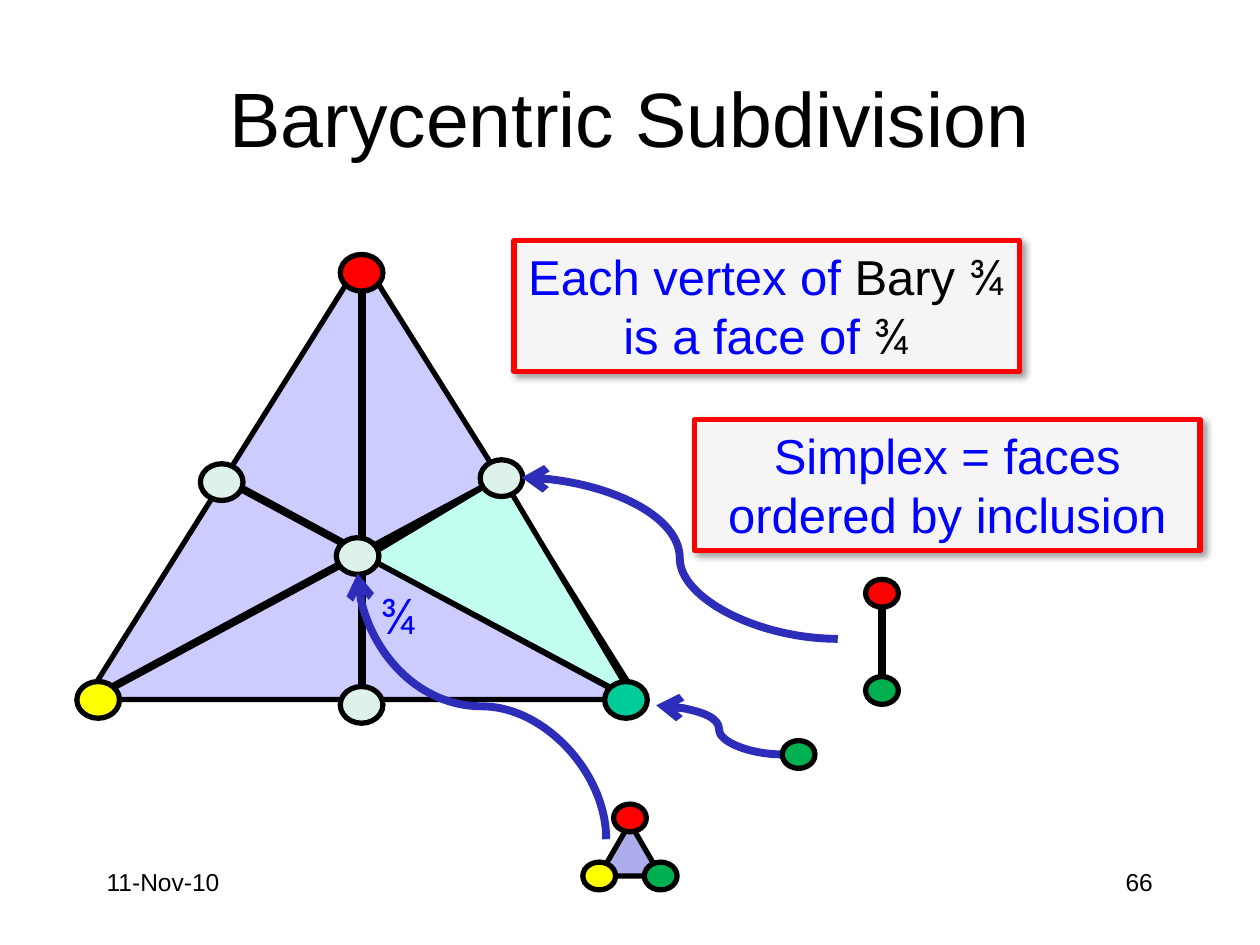
from collections import namedtuple

from lxml import etree
from pptx import Presentation
from pptx.dml.color import RGBColor
from pptx.enum.shapes import MSO_CONNECTOR, MSO_SHAPE
from pptx.enum.text import MSO_ANCHOR, PP_ALIGN
from pptx.oxml.ns import qn
from pptx.util import Cm, Pt

OVAL, TRIANGLE, RECTANGLE = MSO_SHAPE.OVAL, MSO_SHAPE.ISOSCELES_TRIANGLE, MSO_SHAPE.RECTANGLE
STRAIGHT, CURVE = MSO_CONNECTOR.STRAIGHT, MSO_CONNECTOR.CURVE
LEFT, CENTER, RIGHT = PP_ALIGN.LEFT, PP_ALIGN.CENTER, PP_ALIGN.RIGHT
TOP, MIDDLE = MSO_ANCHOR.TOP, MSO_ANCHOR.MIDDLE

BLACK = RGBColor(0x00, 0x00, 0x00)
WHITE = RGBColor(0xFF, 0xFF, 0xFF)
RED = RGBColor(0xFF, 0x00, 0x00)
YELLOW = RGBColor(0xFF, 0xFF, 0x00)
GREEN = RGBColor(0x00, 0xB0, 0x50)
TEAL = RGBColor(0x00, 0xCC, 0x99)
PALE_GREEN = RGBColor(0xDD, 0xF3, 0xEA)
MINT = RGBColor(0xC2, 0xFF, 0xF0)
LAVENDER = RGBColor(0xCC, 0xCC, 0xFF)
LILAC = RGBColor(0xAD, 0xAD, 0xEB)
BLUE = RGBColor(0x00, 0x00, 0xFF)
ARROW_BLUE = RGBColor(0x2D, 0x2D, 0xB9)

TEXT_FONT, SYMBOL_FONT = "Arial", "Lato"
BIG_NODE, SMALL_NODE = (0.86, 0.74), (0.66, 0.56)

Box = namedtuple("Box", "left top width height")


def place(box):
    return [Cm(length) for length in box]


def paint(shape, fill, line=BLACK):
    shape.shadow.inherit = False
    shape.fill.solid()
    shape.fill.fore_color.rgb = fill
    shape.line.color.rgb = line
    shape.line.width = Pt(3)


def add_filled(shapes, kind, box, fill, line=BLACK):
    shape = shapes.add_shape(kind, *place(box))
    paint(shape, fill, line)
    return shape


def add_node(shapes, center, size, fill):
    (x, y), (width, height) = center, size
    add_filled(shapes, OVAL, Box(x - width / 2, y - height / 2, width, height), fill)


def add_line(shapes, kind, begin, end, color=BLACK):
    line = shapes.add_connector(kind, *place(begin + end))
    line.line.color.rgb = color
    line.line.width = Pt(4.5)
    etree.SubElement(line._element.spPr, qn("a:effectLst"))
    return line


def add_curved_arrow(shapes, begin, end, upright=False):
    """Curved arrow; an upright one leaves and arrives vertically."""
    if upright:
        # Turn the ends a quarter clockwise; the rotation turns them back
        mid_x, mid_y = (begin[0] + end[0]) / 2, (begin[1] + end[1]) / 2
        begin, end = [(mid_x - (y - mid_y), mid_y + (x - mid_x)) for x, y in (begin, end)]
    arrow = add_line(shapes, CURVE, begin, end, ARROW_BLUE)
    properties = arrow._element.spPr
    if upright:
        properties.find(qn("a:xfrm")).set("rot", str(270 * 60000))
    etree.SubElement(properties.find(qn("a:ln")), qn("a:tailEnd"), type="arrow")


def write(frame, spans, size, align):
    para = frame.paragraphs[0]
    para.alignment = align
    for text, font, color in spans:
        span = para.add_run()
        span.text = text
        span.font.name = font
        span.font.size = Pt(size)
        span.font.color.rgb = color


def add_text(page, box, spans, size, align, anchor=TOP, wrap=True):
    frame = page.shapes.add_textbox(*place(box)).text_frame
    frame.word_wrap = wrap
    frame.vertical_anchor = anchor
    write(frame, spans, size, align)


def add_callout(page, box, spans):
    shape = add_filled(page.shapes, RECTANGLE, box, WHITE, RED)
    properties = shape._element.spPr
    white = properties.find(qn("a:solidFill"))[0]
    etree.SubElement(white, qn("a:alpha"), val="90000")
    # Soft shadow towards the lower right
    shadow = etree.SubElement(properties.find(qn("a:effectLst")), qn("a:outerShdw"),
                              blurRad=str(Pt(4)), dist=str(Pt(3)), dir=str(45 * 60000),
                              algn="tl", rotWithShape="0")
    black = etree.SubElement(shadow, qn("a:srgbClr"), val=str(BLACK))
    etree.SubElement(black, qn("a:alpha"), val="40000")
    shape.text_frame.word_wrap = True
    shape.text_frame.vertical_anchor = TOP
    write(shape.text_frame, spans, 28, CENTER)


def add_subdivided_triangle(page, box):
    def at(x, y):
        return box.left + x, box.top + y

    shapes = page.shapes
    add_filled(shapes, TRIANGLE, box, LAVENDER)
    add_text(page, Box(*at(5.69, 6.47), 1.09, 1.45),
             [("¾", SYMBOL_FONT, BLUE)], 28, CENTER, wrap=False)

    # Medians
    for begin, end in [((5.56, 0.63), (5.56, 8.89)),
                       ((8.35, 4.44), (0.56, 8.63)),
                       ((10.56, 8.63), (2.77, 4.44))]:
        add_line(shapes, STRAIGHT, at(*begin), at(*end))

    # Highlighted simplex
    corners = [place(at(*corner)) for corner in [(8.38, 4.39), (5.66, 6.02), (11.07, 8.91)]]
    builder = shapes.build_freeform(*corners[0])
    builder.add_line_segments(corners[1:], close=True)
    paint(builder.convert_to_shape(), MINT)

    # Corners, edge midpoints and barycenter
    for center, fill in [((0.25, 8.9), YELLOW), ((5.56, 0.29), RED), ((10.89, 8.9), TEAL),
                         ((5.56, 9), PALE_GREEN), ((2.74, 4.51), PALE_GREEN),
                         ((8.38, 4.43), PALE_GREEN), ((5.48, 6), PALE_GREEN)]:
        add_node(shapes, at(*center), BIG_NODE, fill)


def add_small_triangle(page, box):
    shapes = page.shapes.add_group_shape().shapes
    add_filled(shapes, TRIANGLE, box, LILAC)
    base = box.top + box.height
    for center, fill in [((box.left + box.width / 2, box.top - 0.1), RED),
                         ((box.left + box.width, base), GREEN), ((box.left, base), YELLOW)]:
        add_node(shapes, center, SMALL_NODE, fill)


def add_small_edge(page, box):
    shapes = page.shapes.add_group_shape().shapes
    x = box.left + box.width / 2
    radius = SMALL_NODE[1] / 2
    bottom = box.top + box.height
    add_node(shapes, (x, box.top + radius), SMALL_NODE, RED)
    add_node(shapes, (x, bottom - radius), SMALL_NODE, GREEN)
    add_line(shapes, STRAIGHT, (x, box.top + 2 * radius), (x, bottom - 2 * radius))


def main():
    deck = Presentation()
    deck.slide_width, deck.slide_height = Cm(25.4), Cm(19.05)
    page = deck.slides.add_slide(deck.slide_layouts[6])

    # Title, date and page number
    add_text(page, Box(1.27, 0.76, 22.86, 3.18),
             [("Barycentric Subdivision", TEXT_FONT, BLACK)], 44, CENTER, MIDDLE)
    add_text(page, Box(1.9, 17.35, 5.28, 1.27), [("11-Nov-10", TEXT_FONT, BLACK)], 14, LEFT)
    add_text(page, Box(18.21, 17.35, 5.28, 1.27), [("66", TEXT_FONT, BLACK)], 14, RIGHT)

    # Subdivision and the faces its vertices stand for
    add_subdivided_triangle(page, Box(1.73, 5.21, 11.15, 8.89))
    add_small_triangle(page, Box(12.08, 16.59, 1.24, 1.07))
    add_small_edge(page, Box(17.45, 11.68, 0.66, 2.52))
    add_curved_arrow(page.shapes, (15.77, 15.21), (13.23, 14.22))
    add_curved_arrow(page.shapes, (16.89, 12.88), (10.52, 9.63))
    add_curved_arrow(page.shapes, (12.22, 16.92), (7.21, 11.56), upright=True)
    add_node(page.shapes, (16.1, 15.21), SMALL_NODE, GREEN)

    # Callouts
    add_callout(page, Box(10.36, 4.85, 10.19, 2.64),
                [("Each vertex of ", TEXT_FONT, BLUE), ("Bary ", TEXT_FONT, BLACK),
                 ("¾ ", SYMBOL_FONT, BLACK), ("is a face of ", TEXT_FONT, BLUE),
                 ("¾", SYMBOL_FONT, BLACK)])
    add_callout(page, Box(14, 8.46, 10.19, 2.64),
                [("Simplex = faces ordered by inclusion", TEXT_FONT, BLUE)])

    deck.save("out.pptx")


if __name__ == "__main__":
    main()
